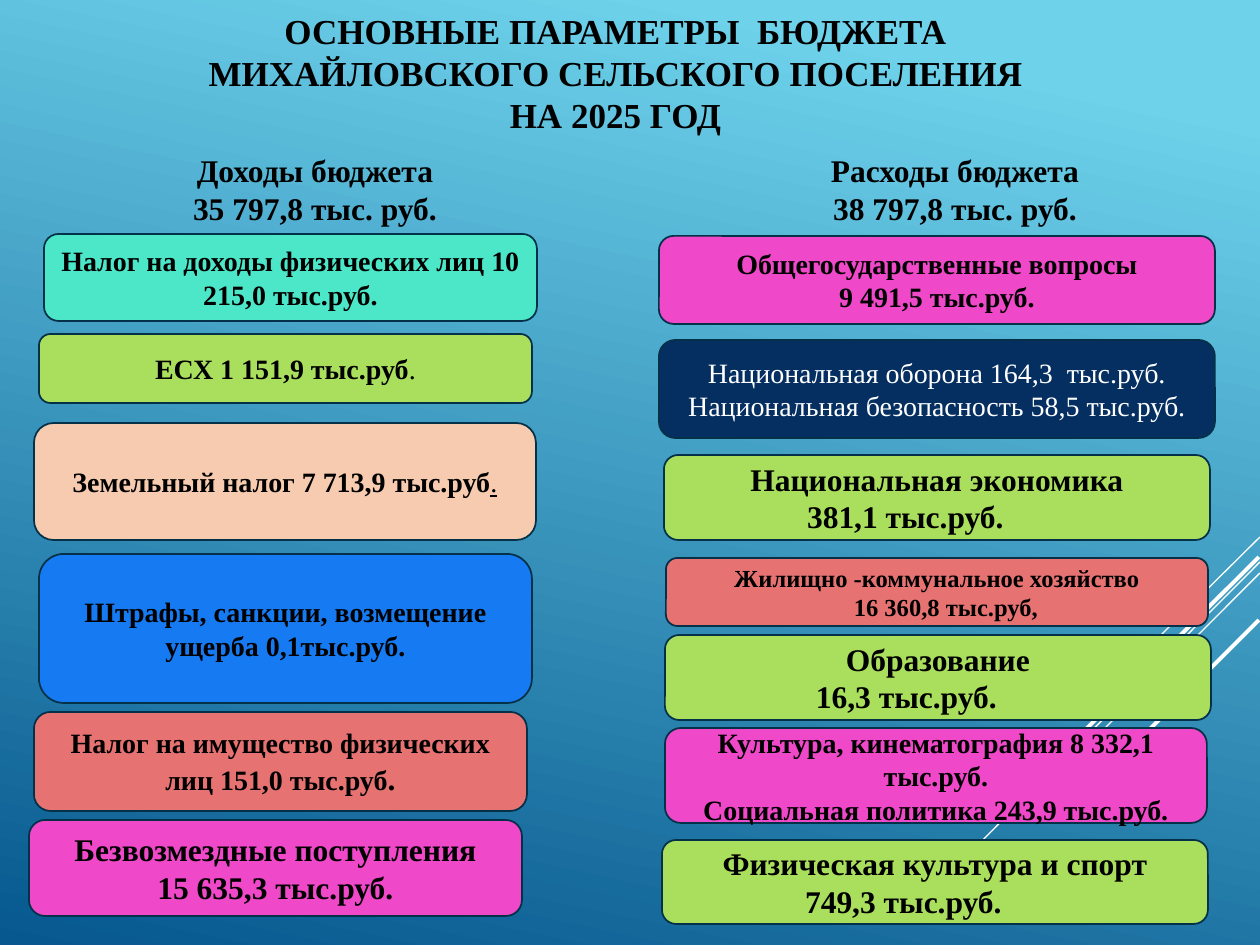
from lxml import etree
from pptx import Presentation
from pptx.dml.color import RGBColor
from pptx.enum.shapes import MSO_CONNECTOR, MSO_SHAPE
from pptx.enum.text import MSO_ANCHOR, PP_ALIGN
from pptx.oxml.ns import qn
from pptx.util import Pt

PX = 9144000 // 1260
BLACK, WHITE, EDGE = "000000", "FFFFFF", "043148"
LIME, PINK, CORAL = "AADF5E", "EF48C9", "E67272"


def rgb(value):
    return RGBColor.from_string(value)


def write(sp, lines, size, color=BLACK, bold=True, anchor=MSO_ANCHOR.MIDDLE):
    tf = sp.text_frame
    tf.word_wrap = True
    tf.vertical_anchor = anchor
    for i, line in enumerate(lines):
        p = tf.paragraphs[0] if i == 0 else tf.add_paragraph()
        p.text = line
        p.alignment = PP_ALIGN.CENTER
        p.font.name = "Times New Roman"
        p.font.size = Pt(size)
        p.font.bold = bold
        p.font.color.rgb = rgb(color)
    return tf.paragraphs[-1]


prs = Presentation()
prs.slide_width, prs.slide_height = 1260 * PX, 945 * PX
s = prs.slides.add_slide(prs.slide_layouts[6])

fill = s.background.fill
fill.gradient()
fill.gradient_angle = 258
for stop, position, color in zip(fill.gradient_stops, (0.1, 1), ("6ED2EB", "06588E")):
    stop.position = position
    stop.color.rgb = rgb(color)

rays = [
    (1260, 537, 1155, 641, 0.75),
    (1260, 562, 920, 903, 0.75),
    (1260, 573, 1043, 790, 0.75),
    (1259, 557, 1060, 755, 2.25),
    (1259, 620, 1115, 764, 2.25),
]
for x1, y1, x2, y2, width in rays:
    ray = s.shapes.add_connector(MSO_CONNECTOR.STRAIGHT, x1 * PX, y1 * PX, x2 * PX, y2 * PX)
    ray.line.color.rgb = rgb(WHITE)
    ray.line.width = Pt(width)
    etree.SubElement(ray._element.spPr, qn("a:effectLst"))

title = "ОСНОВНЫЕ ПАРАМЕТРЫ  БЮДЖЕТА\vМИХАЙЛОВСКОГО СЕЛЬСКОГО ПОСЕЛЕНИЯ\vНА 2025 ГОД"
sp = s.shapes.add_textbox(59 * PX, 16 * PX, 1113 * PX, 112 * PX)
write(sp, [title], 20)

headings = [
    (39, 552, ["Доходы бюджета", "35 797,8 тыс. руб."]),
    (699, 512, ["Расходы бюджета", "38 797,8 тыс. руб."]),
]
for x, w, lines in headings:
    sp = s.shapes.add_textbox(x * PX, 145 * PX, w * PX, 89 * PX)
    write(sp, lines, 18, anchor=MSO_ANCHOR.TOP)

boxes = [
    (44, 234, 493, 87, "4BE7C8", 16, ["Налог на доходы физических лиц 10 215,0 тыс.руб."]),
    (39, 334, 493, 69, LIME, 16, ["ЕСХ 1 151,9 тыс.руб"]),
    (34, 423, 502, 117, "F6CBAF", 16, ["Земельный налог 7 713,9 тыс.руб"]),
    (39, 554, 493, 149, "167BF3", 16, ["Штрафы, санкции, возмещение ущерба 0,1тыс.руб."]),
    (34, 712, 493, 99, CORAL, 16, ["Налог на имущество физических лиц 151,0 тыс.руб"]),
    (29, 820, 493, 96, PINK, 18, ["Безвозмездные поступления", "15 635,3 тыс.руб."]),
    (659, 236, 556, 88, PINK, 16, ["Общегосударственные вопросы", "9 491,5 тыс.руб."]),
    (659, 340, 556, 98, "052F61", 16,
     ["Национальная оборона 164,3  тыс.руб.", "Национальная безопасность 58,5 тыс.руб."]),
    (664, 455, 546, 85, LIME, 18, ["Национальная экономика", "381,1 тыс.руб."]),
    (666, 558, 542, 68, CORAL, 14, ["Жилищно -коммунальное хозяйство", "16 360,8 тыс.руб,"]),
    (665, 635, 546, 85, LIME, 18, ["Образование", "16,3 тыс.руб."]),
    (665, 728, 542, 95, PINK, 16,
     ["Культура, кинематография 8 332,1 тыс.руб.", "Социальная политика 243,9 тыс.руб."]),
    (662, 840, 546, 84, LIME, 18, ["Физическая культура и спорт", "749,3 тыс.руб."]),
]
indents = {
    "Национальная экономика": ("marR", 63),
    "Жилищно -коммунальное хозяйство": ("marL", 18),
    "Образование": ("marR", 63),
    "Физическая культура и спорт": ("marR", 63),
}
endings = {
    "ЕСХ 1 151,9 тыс.руб": (16, False, False),
    "Земельный налог 7 713,9 тыс.руб": (16, False, True),
    "Налог на имущество физических лиц 151,0 тыс.руб": (18, True, False),
}
for x, y, w, h, color, size, lines in boxes:
    sp = s.shapes.add_shape(MSO_SHAPE.ROUNDED_RECTANGLE, x * PX, y * PX, w * PX, h * PX)
    sp.shadow.inherit = False
    sp.fill.solid()
    sp.fill.fore_color.rgb = rgb(color)
    sp.line.color.rgb = rgb(EDGE)
    sp.line.width = Pt(1)
    dark = color == "052F61"
    p = write(sp, lines, size, WHITE if dark else BLACK, not dark)
    if lines[0] in indents:
        side, gap = indents[lines[0]]
        p._p.get_or_add_pPr().set(side, str(gap * PX))
    if lines[0] in endings:
        r = p.add_run()
        r.text = "."
        end_size, r.font.bold, r.font.underline = endings[lines[0]]
        r.font.size = Pt(end_size)

prs.save("out.pptx")
